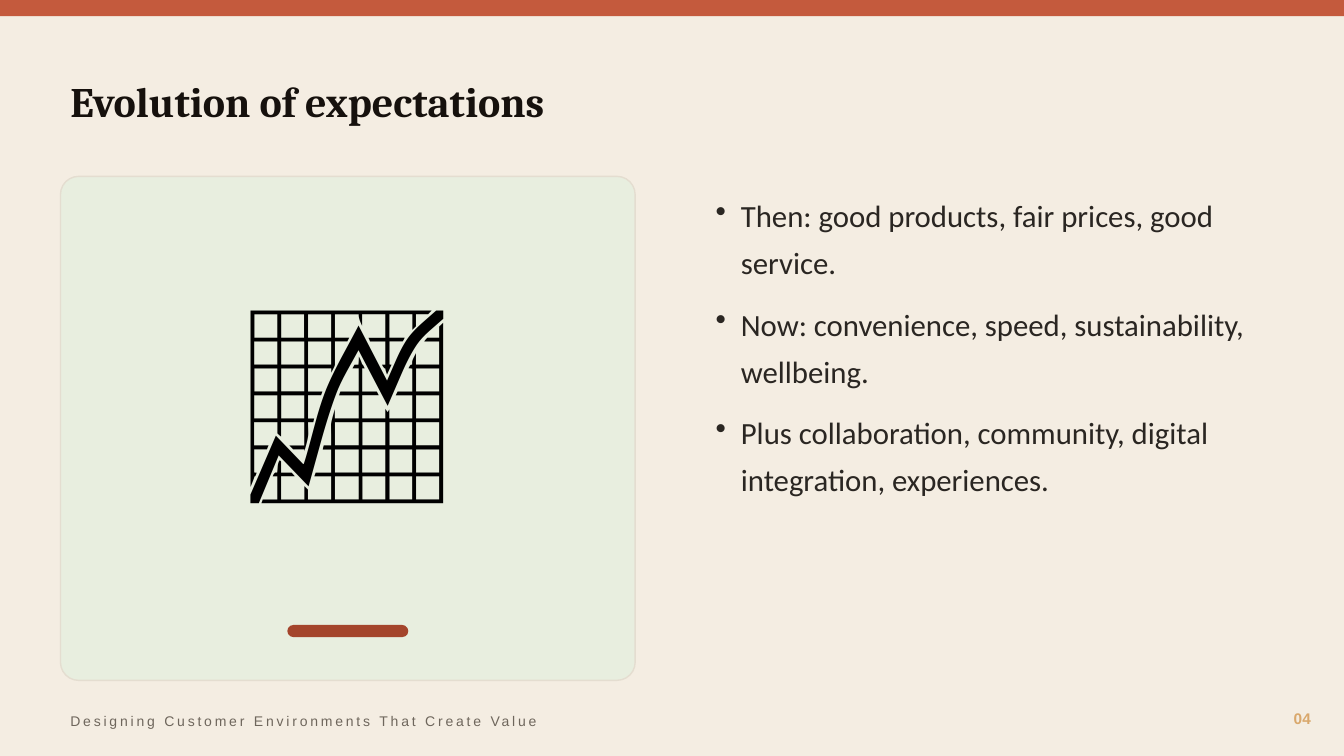
"""Build the slide on how customer expectations have evolved."""
from dataclasses import dataclass

from lxml import etree
from pptx import Presentation
from pptx.dml.color import RGBColor
from pptx.enum.shapes import MSO_SHAPE
from pptx.enum.text import MSO_ANCHOR, PP_ALIGN
from pptx.oxml.ns import qn
from pptx.util import Inches, Pt

RECTANGLE = MSO_SHAPE.RECTANGLE
ROUNDED = MSO_SHAPE.ROUNDED_RECTANGLE
TOP, MIDDLE = MSO_ANCHOR.TOP, MSO_ANCHOR.MIDDLE
LEFT, CENTER, RIGHT = PP_ALIGN.LEFT, PP_ALIGN.CENTER, PP_ALIGN.RIGHT

CELL = 0.5
COLUMNS, ROWS = 26.66, 15


@dataclass(frozen=True)
class Theme:
    paper: str = "F4EDE2"
    band: str = "C45A3D"
    panel: str = "E8EEDF"
    border: str = "E4DDD0"
    accent: str = "A4452C"
    heading: str = "16110D"
    icon: str = "000000"
    body: str = "2A2622"
    number: str = "D9A86C"
    footer: str = "6E665C"
    serif: str = "Cambria"
    sans: str = "Calibri"
    small: str = "Arial"
    heading_size: int = 30
    icon_size: int = 150
    body_size: int = 22
    number_size: int = 11
    footer_size: int = 10


def color(value):
    return RGBColor.from_string(value)


def grid(*cells):
    return [Inches(cell * CELL) for cell in cells]


def write(para, text, *, font, size, ink, bold=False, tracking=0):
    span = para.add_run()
    span.text = text
    span.font.name = font
    span.font.size = Pt(size)
    span.font.bold = bold
    span.font.color.rgb = color(ink)
    if tracking:
        span._r.get_or_add_rPr().set("spc", str(tracking * 100))


class Composer:
    def __init__(self, deck, theme):
        self.theme = theme
        self.page = deck.slides.add_slide(deck.slide_layouts[6])
        fill = self.page.background.fill
        fill.solid()
        fill.fore_color.rgb = color(theme.paper)

    def block(self, kind, area, fill, radius=None, border=None):
        shape = self.page.shapes.add_shape(kind, *grid(*area))
        shape.shadow.inherit = False
        shape.fill.solid()
        shape.fill.fore_color.rgb = color(fill)
        if radius is not None:
            shape.adjustments[0] = radius
        if border:
            shape.line.color.rgb = color(border)
            shape.line.width = Pt(1)
        else:
            shape.line.fill.background()

    def frame(self, area, anchor):
        box = self.page.shapes.add_textbox(*grid(*area))
        box.text_frame.word_wrap = True
        box.text_frame.vertical_anchor = anchor
        return box.text_frame

    def label(self, area, text, align=LEFT, **style):
        para = self.frame(area, MIDDLE).paragraphs[0]
        para.alignment = align
        write(para, text, **style)

    def bullets(self, area, items, **style):
        frame = self.frame(area, TOP)
        for index, item in enumerate(items):
            para = frame.add_paragraph() if index else frame.paragraphs[0]
            properties = para._p.get_or_add_pPr()
            properties.set("marL", str(Inches(0.25)))
            properties.set("indent", str(Inches(-0.25)))
            etree.SubElement(properties, qn("a:buChar")).set("char", "•")
            para.line_spacing = 1.28
            para.space_after = Pt(10)
            write(para, item, **style)


def main():
    theme = Theme()
    deck = Presentation()
    deck.slide_width, deck.slide_height = grid(COLUMNS, ROWS)
    page = Composer(deck, theme)

    page.block(RECTANGLE, (0, 0, COLUMNS, 0.32), theme.band)
    page.label((1.2, 1, 24.2, 2), "Evolution of expectations",
               font=theme.serif, size=theme.heading_size, ink=theme.heading, bold=True)

    page.block(ROUNDED, (1.2, 3.5, 11.4, 10), theme.panel, radius=0.036, border=theme.border)
    page.label((1.2, 3.5, 11.4, 8.2), "📈", align=CENTER,
               font=theme.sans, size=theme.icon_size, ink=theme.icon)
    page.block(ROUNDED, (5.7, 12.4, 2.4, 0.24), theme.accent, radius=0.5)

    page.bullets((14, 3.6, 11.4, 10), [
        "Then: good products, fair prices, good service.",
        "Now: convenience, speed, sustainability, wellbeing.",
        "Plus collaboration, community, digital integration, experiences.",
    ], font=theme.sans, size=theme.body_size, ink=theme.body)

    page.label((24.4, 13.9, 1.8, 0.7), "04", align=RIGHT,
               font=theme.small, size=theme.number_size, ink=theme.number, bold=True)
    page.label((1.2, 14, 16, 0.6), "Designing Customer Environments That Create Value",
               font=theme.small, size=theme.footer_size, ink=theme.footer, tracking=2)

    deck.save("out.pptx")


if __name__ == "__main__":
    main()
